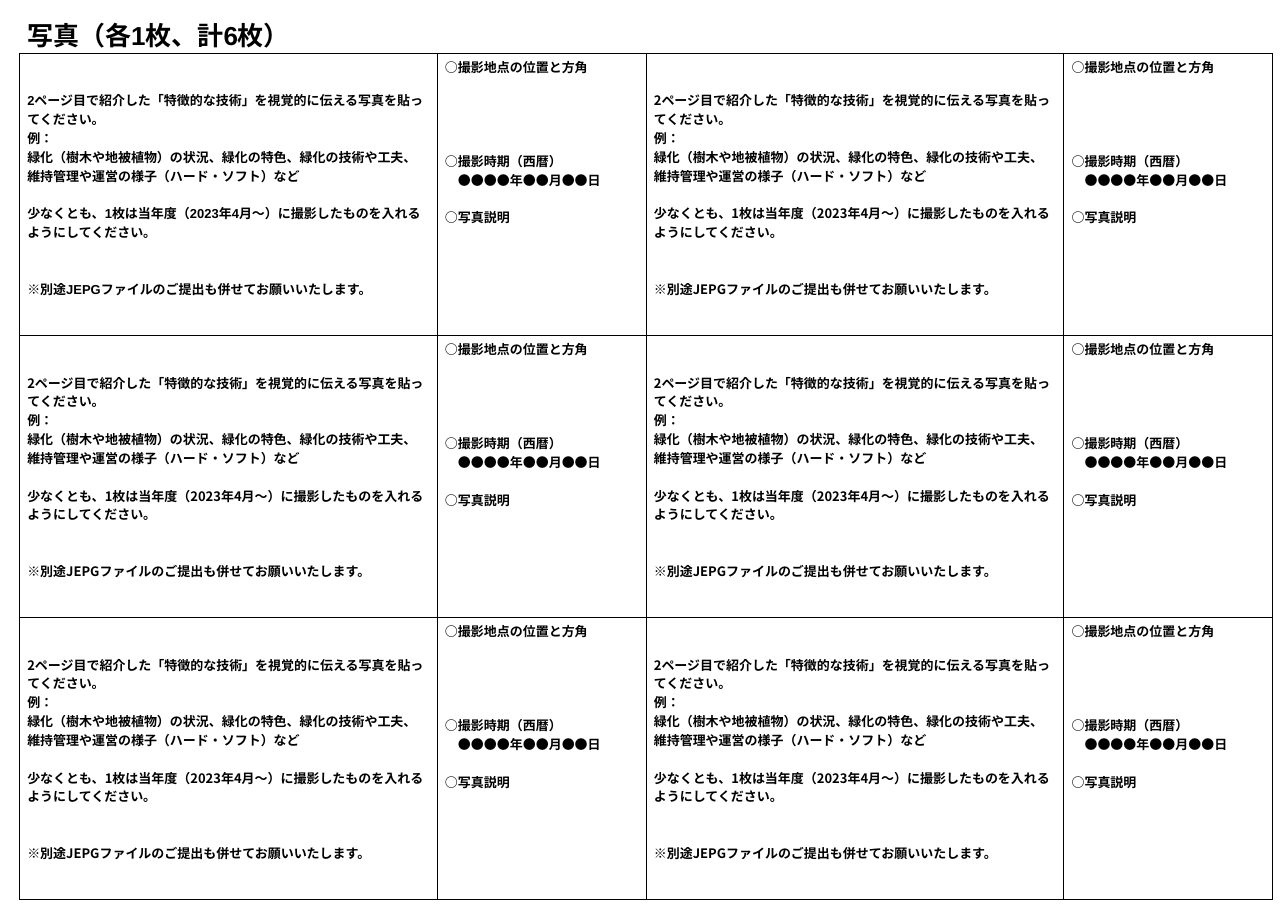
from dataclasses import dataclass

from lxml import etree
from pptx import Presentation
from pptx.dml.color import RGBColor
from pptx.enum import lang, text
from pptx.oxml import ns
from pptx.table import _Cell
from pptx.util import Pt


@dataclass(frozen=True)
class Theme:
    ink: str = "000000"
    latin: str = "Arial"
    japanese: str = "Noto Sans CJK JP"
    title: float = 24
    body: float = 12
    line: float = 17.4
    border: float = 1


@dataclass(frozen=True)
class Para:
    words: str
    blank_lines: int = 0


THEME = Theme()
TITLE = [Para("写真（各1枚、計6枚）")]
PHOTO = [
    Para("2ページ目で紹介した「特徴的な技術」を視覚的に伝える写真を貼ってください。"),
    Para("例："),
    Para("緑化（樹木や地被植物）の状況、緑化の特色、緑化の技術や工夫、維持管理や運営の様子（ハード・ソフト）など"),
    Para("少なくとも、1枚は当年度（2023年4月～）に撮影したものを入れるようにしてください。", 1),
    Para("※別途JEPGファイルのご提出も併せてお願いいたします。", 2),
]
DETAILS = [
    Para("○撮影地点の位置と方角"),
    Para("○撮影時期（西暦）", 4),
    Para("　●●●●年●●月●●日"),
    Para("○写真説明", 1),
]
COL_WIDTHS = [386, 193] * 2
ROW_HEIGHTS = [35.6] + [260.7] * 3


def write(cell: _Cell, paras: list[Para], size: float, latin: str) -> None:
    tf = cell.text_frame
    tf.word_wrap = True
    for i, para in enumerate(paras):
        p = tf.add_paragraph() if i else tf.paragraphs[0]
        p.alignment = text.PP_ALIGN.LEFT
        p.space_before = Pt(para.blank_lines * THEME.line)
        r = p.add_run()
        r.text = para.words
        r.font.size = Pt(size)
        r.font.bold = True
        r.font.name = latin
        r.font.color.rgb = RGBColor.from_string(THEME.ink)
        r.font.language_id = lang.MSO_LANGUAGE_ID.JAPANESE
        ea = etree.SubElement(r.font._element, ns.qn("a:ea"))
        ea.set("typeface", THEME.japanese)


def outline(cell: _Cell, sides: str) -> None:
    tc_pr = cell._tc.get_or_add_tcPr()
    for side in "LRTB":
        ln = etree.SubElement(tc_pr, ns.qn(f"a:ln{side}"))
        if side in sides:
            ln.set("w", str(Pt(THEME.border)))
            fill = etree.SubElement(ln, ns.qn("a:solidFill"))
            etree.SubElement(fill, ns.qn("a:srgbClr")).set("val", THEME.ink)
        else:
            ln.set("w", "0")
            etree.SubElement(ln, ns.qn("a:noFill"))
    cell.fill.background()


def main() -> None:
    prs = Presentation()
    prs.slide_width, prs.slide_height = Pt(1190.16), Pt(841.68)
    s = prs.slides.add_slide(prs.slide_layouts[6])
    frame = s.shapes.add_table(
        len(ROW_HEIGHTS), len(COL_WIDTHS), Pt(18), Pt(13.7),
        Pt(sum(COL_WIDTHS)), Pt(sum(ROW_HEIGHTS)),
    )
    table = frame.table
    table.first_row = table.horz_banding = False
    for column, width in zip(table.columns, COL_WIDTHS):
        column.width = Pt(width)
    for row, height in zip(table.rows, ROW_HEIGHTS):
        row.height = Pt(height)

    for row_no, row in enumerate(table.rows):
        for col_no, cell in enumerate(row.cells):
            outline(cell, "LRTB" if row_no else "B")
            if row_no == 0:
                continue
            if col_no % 2:
                write(cell, DETAILS, THEME.body, THEME.latin)
            else:
                first = (row_no, col_no) == (1, 0)
                write(cell, PHOTO, THEME.body, THEME.latin if first else THEME.japanese)
                cell.vertical_anchor = text.MSO_ANCHOR.MIDDLE

    title = table.cell(0, 0)
    title.merge(table.cell(0, len(COL_WIDTHS) - 1))
    title.margin_top = title.margin_bottom = Pt(0)
    title.vertical_anchor = text.MSO_ANCHOR.BOTTOM
    write(title, TITLE, THEME.title, THEME.latin)
    prs.save("out.pptx")


if __name__ == "__main__":
    main()
